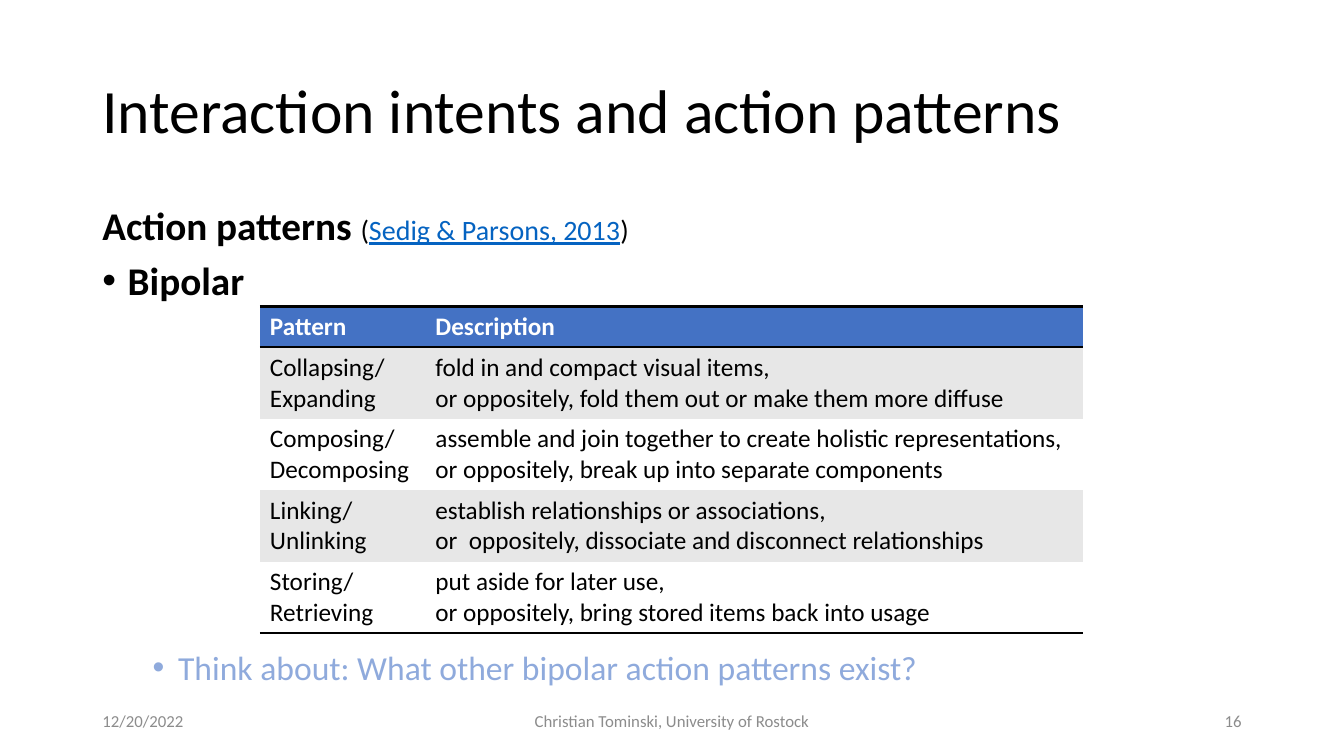
from lxml import etree
from pptx import Presentation
from pptx import util as u
from pptx.dml.color import RGBColor
from pptx.enum import text as t
from pptx.oxml.ns import qn

FONT = "Calibri"
BLACK, WHITE, GREY = "000000", "FFFFFF", "8C8C8C"
BLUE, PALE, LINK, BAND = "4472C4", "8FAADC", "0563C1", "E7E7E7"
PLAIN = "{2D5ABB26-0587-4C30-8999-92F81FD0307C}"  # table style without grid
EDGE = 3.18  # left margin in cm: text starts at 2.34 + 0.25
LEFT = 2.33

ROWS = [
    ("Pattern", "Description"),
    ("Collapsing/ Expanding",
     "fold in and compact visual items,\v"
     "or oppositely, fold them out or make them more diffuse"),
    ("Composing/ Decomposing",
     "assemble and join together to create holistic representations,\v"
     "or oppositely, break up into separate components"),
    ("Linking/ Unlinking",
     "establish relationships or associations,\v"
     "or  oppositely, dissociate and disconnect relationships"),
    ("Storing/ Retrieving",
     "put aside for later use,\v"
     "or oppositely, bring stored items back into usage"),
]


def color(code):
    return RGBColor.from_string(code)


def style(font, size, code=BLACK, **more):
    for key, val in dict(name=FONT, size=u.Pt(size), **more).items():
        setattr(font, key, val)
    font.color.rgb = color(code)


def add_box(slide, x, y, w, h, anchor=t.MSO_ANCHOR.TOP):
    box = slide.shapes.add_textbox(u.Cm(x), u.Cm(y), u.Cm(w), u.Cm(h))
    frame = box.text_frame
    frame.word_wrap = True
    frame.vertical_anchor = anchor
    return frame


def add_run(para, words, size, code=BLACK, **more):
    run = para.add_run()
    run.text = words
    style(run.font, size, code, **more)


def add_bullet(para, left):
    """Give the paragraph a round bullet that hangs 0.64 cm before left."""
    props = para._p.get_or_add_pPr()
    props.set("marL", str(u.Cm(left)))
    props.set("indent", str(-u.Cm(0.64)))
    face = etree.SubElement(props, qn("a:buFont"))
    face.set("typeface", "Arial")
    etree.SubElement(props, qn("a:buChar")).set("char", "•")


def add_line(cell, side):
    """Draw a black 2 pt border on one side of a cell: T or B."""
    line = etree.SubElement(cell._tc.get_or_add_tcPr(), qn("a:ln" + side))
    line.set("w", str(u.Pt(2)))
    fill = etree.SubElement(line, qn("a:solidFill"))
    etree.SubElement(fill, qn("a:srgbClr")).set("val", BLACK)


def add_title(slide):
    para = add_box(slide, LEFT, 1.02, 29.21, 3.68,
                   t.MSO_ANCHOR.MIDDLE).paragraphs[0]
    para.line_spacing = 0.9
    add_run(para, "Interaction intents and action patterns", 44)


def add_body(slide):
    frame = add_box(slide, LEFT, 5.08, 29.85, 2.6)
    head = frame.paragraphs[0]
    add_run(head, "Action patterns ", 28, bold=True)
    add_run(head, "(", 20)
    add_run(head, "Sedig & Parsons, 2013", 20, LINK, underline=True)
    add_run(head, ")", 20)
    kind = frame.add_paragraph()
    kind.space_before = u.Pt(9)
    add_bullet(kind, 0.64)
    add_run(kind, "Bipolar", 28, bold=True)
    task = add_box(slide, LEFT, 16.28, 29.85, 1.2).paragraphs[0]
    add_bullet(task, 1.91)
    add_run(task, "Think about: What other bipolar action patterns exist?",
            24, PALE)
    for para in (head, kind, task):
        para.line_spacing = 0.9


def add_grid(slide):
    shape = slide.shapes.add_table(len(ROWS), 2, u.Cm(6.55), u.Cm(7.72),
                                   u.Cm(20.75), u.Cm(8.23))
    grid = shape.table
    grid.first_row = grid.horz_banding = False
    grid._tbl.tblPr.find(qn("a:tableStyleId")).text = PLAIN
    for col, width in zip(grid.columns, (4.17, 16.58)):
        col.width = u.Cm(width)
    for i, row in enumerate(ROWS):
        top = i == 0
        grid.rows[i].height = u.Cm(1.03 if top else 1.8)
        back = BLUE if top else BAND if i % 2 else WHITE
        sides = "TB" if top else "B" if i == len(ROWS) - 1 else ""
        for j, words in enumerate(row):
            cell = grid.cell(i, j)
            cell.text = words
            for side in sides:
                add_line(cell, side)
            cell.fill.solid()
            cell.fill.fore_color.rgb = color(back)
            for run in cell.text_frame.paragraphs[0].runs:
                style(run.font, 18, WHITE if top else BLACK, bold=top)


def add_footer(slide):
    for x, w, side, words in (
            (LEFT, 7.62, t.PP_ALIGN.LEFT, "12/20/2022"),
            (11.22, 11.43, t.PP_ALIGN.CENTER,
             "Christian Tominski, University of Rostock"),
            (23.92, 7.62, t.PP_ALIGN.RIGHT, "16")):
        para = add_box(slide, x, 17.65, w, 1.01,
                       t.MSO_ANCHOR.MIDDLE).paragraphs[0]
        para.alignment = side
        add_run(para, words, 12, GREY)


def main():
    deck = Presentation()
    deck.slide_width, deck.slide_height = u.Cm(33.87), u.Cm(19.05)
    slide = deck.slides.add_slide(deck.slide_layouts[6])
    add_title(slide)
    add_body(slide)
    add_footer(slide)
    add_grid(slide)
    deck.save("out.pptx")


if __name__ == "__main__":
    main()
